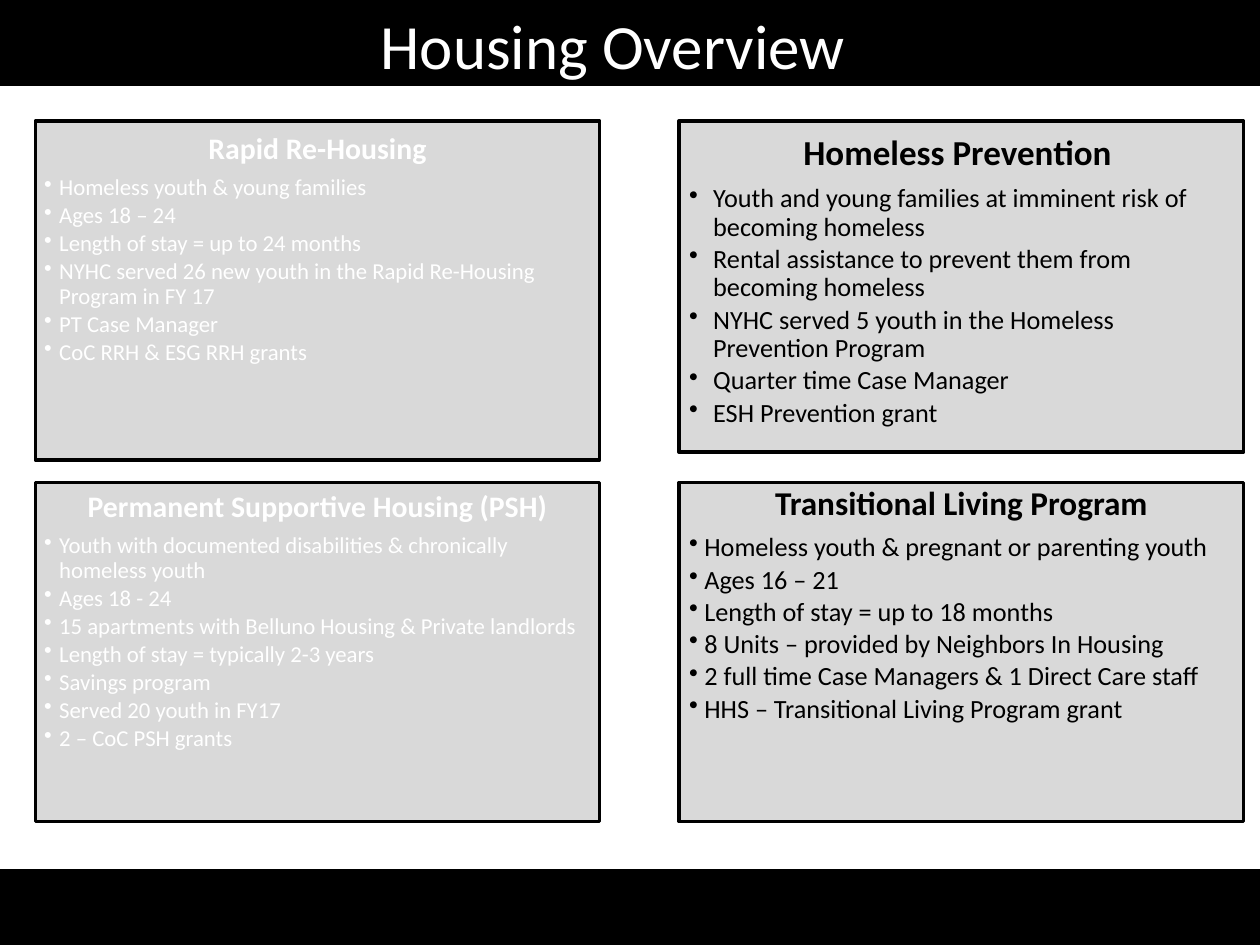
from pptx import Presentation
from pptx.dml.color import RGBColor
from pptx.enum.shapes import MSO_SHAPE
from pptx.enum.text import MSO_ANCHOR, PP_ALIGN
from pptx.oxml.ns import qn
from pptx.util import Inches, Pt
from lxml import etree

RECT = MSO_SHAPE.RECTANGLE
TOP, MIDDLE = MSO_ANCHOR.TOP, MSO_ANCHOR.MIDDLE
LEFT, CENTER = PP_ALIGN.LEFT, PP_ALIGN.CENTER
BLACK = RGBColor(0x00, 0x00, 0x00)
WHITE = RGBColor(0xFF, 0xFF, 0xFF)
GRAY = RGBColor(0xD9, 0xD9, 0xD9)
FONT = "Calibri"

COLS = [0.28, 5.39]
ROWS = [0.96, 3.83]
CARD_W, CARD_H = 4.48, 2.69


def add_rect(shapes, x, y, w, h, fill, line):
    sp = shapes.add_shape(RECT, Inches(x), Inches(y), Inches(w), Inches(h))
    sp.shadow.inherit = False
    sp.fill.solid()
    sp.fill.fore_color.rgb = fill
    sp.line.color.rgb = BLACK
    sp.line.width = Pt(line)
    return sp


def write(p, text, size, color, bold=False, align=LEFT, after=0, spacing=1.0, indent=0):
    p.alignment = align
    p.line_spacing = spacing
    p.space_before = Pt(0)
    p.space_after = Pt(after * size)
    if indent:
        p.level = 1
        pPr = p._p.get_or_add_pPr()
        pPr.set("marL", str(Inches(indent)))
        pPr.set("indent", str(-Inches(indent)))
        etree.SubElement(pPr, qn("a:buChar")).set("char", "•")
    r = p.add_run()
    r.text = text
    r.font.name = FONT
    r.font.size = Pt(size)
    r.font.bold = bold
    r.font.color.rgb = color


prs = Presentation()
prs.slide_width, prs.slide_height = Inches(10), Inches(7.5)
s = prs.slides.add_slide(prs.slide_layouts[5])

title = s.shapes.title
for y, h in [(0, 0.68), (6.9, 0.6)]:
    bar = add_rect(s.shapes, 0, y, 10, h, BLACK, 0.75)
    title._element.addprevious(bar._element)

title.left, title.top = Inches(0.67), Inches(0)
title.width, title.height = Inches(8.5), Inches(0.71)
title.text_frame.vertical_anchor = MIDDLE
write(title.text_frame.paragraphs[0], "Housing Overview ", 36, WHITE, align=CENTER)

cards = [
    dict(col=0, row=1, h=CARD_H, text_top=ROWS[1], inset=0.07, color=WHITE,
         head="Permanent Supportive Housing (PSH)", head_size=17, head_spacing=0.9,
         size=13, indent=0.12, items=[
             "Youth with documented disabilities & chronically homeless youth",
             "Ages 18 - 24",
             "15 apartments with Belluno Housing & Private landlords",
             "Length of stay = typically 2-3 years",
             "Savings program",
             "Served 20 youth in FY17",
             "2 – CoC PSH grants"]),
    dict(col=0, row=0, h=CARD_H, text_top=ROWS[0], inset=0.07, color=WHITE,
         head="Rapid Re-Housing", head_size=17, head_spacing=1.0,
         size=13, indent=0.12, items=[
             "Homeless youth & young families",
             "Ages 18 – 24",
             "Length of stay = up to 24 months",
             "NYHC served 26 new youth in the Rapid Re-Housing Program in FY 17",
             "PT Case Manager",
             "CoC RRH & ESG RRH grants"]),
    dict(col=1, row=0, h=2.63, text_top=ROWS[0], inset=0.08, color=BLACK,
         head="Homeless Prevention ", head_size=20, head_spacing=1.0,
         size=15, indent=0.19, items=[
             "Youth and young families at imminent risk of becoming homeless",
             "Rental assistance to prevent them from becoming homeless",
             "NYHC served 5 youth in the Homeless Prevention Program",
             "Quarter time Case Manager",
             "ESH Prevention grant"]),
    dict(col=1, row=1, h=CARD_H, text_top=3.75, inset=0.08, color=BLACK,
         head="Transitional Living Program", head_size=19, head_spacing=1.0,
         size=15, indent=0.12, items=[
             "Homeless youth & pregnant or parenting youth",
             "Ages 16 – 21",
             "Length of stay = up to 18 months",
             "8 Units – provided by Neighbors In Housing",
             "2 full time Case Managers & 1 Direct Care staff",
             "HHS – Transitional Living Program grant"]),
]

for card in cards:
    x, y = COLS[card["col"]], ROWS[card["row"]]
    group = s.shapes.add_group_shape()
    add_rect(group.shapes, x, y, CARD_W, card["h"], GRAY, 2)
    text_h = y + card["h"] - card["text_top"]
    box = group.shapes.add_textbox(Inches(x), Inches(card["text_top"]),
                                   Inches(CARD_W), Inches(text_h))
    tf = box.text_frame
    tf.word_wrap = True
    tf.vertical_anchor = TOP
    inset = Inches(card["inset"])
    tf.margin_left = tf.margin_right = tf.margin_top = tf.margin_bottom = inset
    write(tf.paragraphs[0], card["head"], card["head_size"], card["color"], bold=True,
          align=CENTER, after=0.35, spacing=card["head_spacing"])
    for item in card["items"]:
        write(tf.add_paragraph(), item, card["size"], card["color"],
              after=0.15, spacing=0.9, indent=card["indent"])

prs.save("out.pptx")
